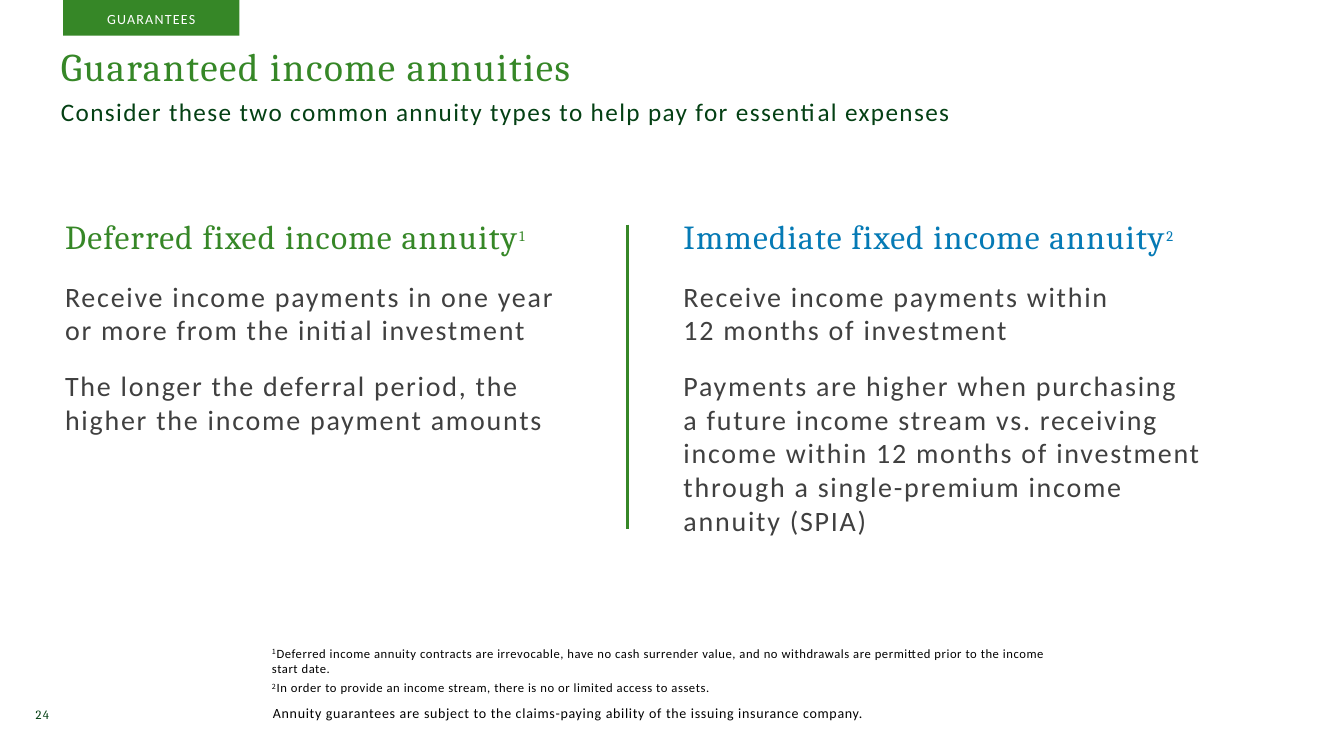
from dataclasses import dataclass

from lxml.etree import SubElement
from pptx import Presentation
from pptx.dml.color import RGBColor
from pptx.enum.shapes import MSO_CONNECTOR, MSO_SHAPE
from pptx.enum.text import MSO_ANCHOR, MSO_AUTO_SIZE, PP_ALIGN
from pptx.oxml.ns import qn
from pptx.slide import Slide
from pptx.text.text import TextFrame
from pptx.util import Emu, Pt

EMU_PER_PX = 9525


@dataclass(frozen=True)
class Style:
    font: str
    size: int
    color: str
    spacing: float
    baseline: int = 0


@dataclass(frozen=True)
class Theme:
    green: str = "368727"
    title: Style = Style("Cambria", 28, "368727", 1.15)
    subtitle: Style = Style("Calibri", 18, "044014", 1.0)
    tab: Style = Style("Calibri", 10, "FFFFFF", 0.9)
    deferred: Style = Style("Cambria", 24, "368727", 0.9)
    deferred_mark: Style = Style("Cambria", 18, "368727", 1.0, 32)
    immediate: Style = Style("Cambria", 24, "057AB5", 0.85)
    immediate_mark: Style = Style("Cambria", 18, "057AB5", 1.0, 32)
    body: Style = Style("Calibri", 20, "404040", 1.25)
    footnote: Style = Style("Calibri", 9, "000000", 0.4)
    footnote_mark: Style = Style("Noto Sans CJK TC", 9, "000000", 0.5, 28)
    guarantee: Style = Style("Calibri", 10, "000000", 0.5)
    page_number: Style = Style("Cambria", 9, "044014", 0.9)


THEME = Theme()


@dataclass(frozen=True)
class Piece:
    text: str
    style: Style


@dataclass(frozen=True)
class Line:
    pieces: tuple[Piece, ...]
    space_before: float = 0


@dataclass(frozen=True)
class Box:
    left: int
    top: int
    width: int
    height: int
    lines: tuple[Line, ...]
    inset_top: int = 1


def px(value: int) -> Emu:
    return Emu(value * EMU_PER_PX)


def line(text: str, style: Style, space_before: float = 0) -> Line:
    return Line((Piece(text, style),), space_before)


def annuity_lines(
    name: str, mark: str, style: Style, mark_style: Style, timing: str, benefit: str
) -> tuple[Line, ...]:
    return (
        Line((Piece(name, style), Piece(mark, mark_style))),
        line(timing, THEME.body, 16.2),
        line(benefit, THEME.body, 15.8),
    )


def footnote(mark: str, text: str, space_before: float = 0) -> Line:
    return Line((Piece(mark, THEME.footnote_mark), Piece(text, THEME.footnote)), space_before)


def format_run(run, style: Style) -> None:
    run.font.name = style.font
    run.font.size = Pt(style.size)
    run.font.color.rgb = RGBColor.from_string(style.color)
    properties = run._r.get_or_add_rPr()
    properties.set("spc", str(round(style.spacing * 100)))
    if style.baseline:
        properties.set("baseline", str(style.baseline * 1000))


def fill_text(
    frame: TextFrame, lines: tuple[Line, ...], inset_top: int, align: PP_ALIGN = PP_ALIGN.LEFT
) -> None:
    frame.word_wrap = True
    frame.auto_size = MSO_AUTO_SIZE.NONE
    frame.vertical_anchor = MSO_ANCHOR.TOP
    frame.margin_left = frame.margin_right = frame.margin_bottom = 0
    frame.margin_top = px(inset_top)
    for index, content in enumerate(lines):
        paragraph = frame.add_paragraph() if index else frame.paragraphs[0]
        first, *rest = content.pieces
        paragraph.text = first.text
        paragraph.alignment = align
        paragraph.space_before = Pt(content.space_before)
        for run in paragraph.runs:
            format_run(run, first.style)
        for piece in rest:
            run = paragraph.add_run()
            run.text = piece.text
            format_run(run, piece.style)


def place_title(slide: Slide, box: Box) -> None:
    title = slide.shapes.title
    title.left, title.top = px(box.left), px(box.top)
    title.width, title.height = px(box.width), px(box.height)
    fill_text(title.text_frame, box.lines, box.inset_top)


def add_text(slide: Slide, box: Box) -> None:
    shape = slide.shapes.add_textbox(px(box.left), px(box.top), px(box.width), px(box.height))
    fill_text(shape.text_frame, box.lines, box.inset_top)


def add_tab(slide: Slide, box: Box) -> None:
    tab = slide.shapes.add_shape(
        MSO_SHAPE.RECTANGLE, px(box.left), px(box.top), px(box.width), px(box.height)
    )
    tab.shadow.inherit = False
    tab.fill.solid()
    tab.fill.fore_color.rgb = RGBColor.from_string(THEME.green)
    tab.line.fill.background()
    fill_text(tab.text_frame, box.lines, box.inset_top, PP_ALIGN.CENTER)


def add_divider(slide: Slide, x: int, top: int, bottom: int) -> None:
    divider = slide.shapes.add_connector(
        MSO_CONNECTOR.STRAIGHT, px(x), px(top), px(x), px(bottom)
    )
    divider.line.color.rgb = RGBColor.from_string(THEME.green)
    divider.line.width = Pt(2.25)
    SubElement(divider._element.spPr, qn("a:effectLst"))


TITLE = Box(58, 28, 852, 93, (
    line("Guaranteed income annuities", THEME.title),
    line("Consider these two common annuity types to help pay for essential expenses",
         THEME.subtitle, 5),
), 12)
TAB = Box(60, 0, 168, 34, (line("GUARANTEES", THEME.tab),), 10)
TEXTS = (
    Box(62, 205, 480, 212, annuity_lines(
        "Deferred fixed income annuity", "1", THEME.deferred, THEME.deferred_mark,
        "Receive income payments in one year\vor more from the initial investment",
        "The longer the deferral period, the\vhigher the income payment amounts",
    )),
    Box(651, 205, 507, 308, annuity_lines(
        "Immediate fixed income annuity", "2", THEME.immediate, THEME.immediate_mark,
        "Receive income payments within\v12 months of investment",
        "Payments are higher when purchasing\va future income stream vs. receiving\v"
        "income within 12 months of investment\vthrough a single-premium income\v"
        "annuity (SPIA)",
    )),
    Box(259, 614, 749, 50, (
        footnote("1", "Deferred income annuity contracts are irrevocable, have no cash "
                 "surrender value, and no withdrawals are permitted prior to the income "
                 "start date."),
        footnote("2", "In order to provide an income stream, there is no or limited "
                 "access to assets.", 3.1),
    )),
    Box(260, 670, 568, 19, (
        line("Annuity guarantees are subject to the claims-paying ability of the "
             "issuing insurance company.", THEME.guarantee),
    )),
    Box(34, 672, 24, 18, (line("24", THEME.page_number),)),
)


def main() -> None:
    deck = Presentation()
    deck.slide_width, deck.slide_height = px(1280), px(720)
    slide = deck.slides.add_slide(deck.slide_layouts.get_by_name("Title Only"))
    place_title(slide, TITLE)
    add_tab(slide, TAB)
    for box in TEXTS:
        add_text(slide, box)
    add_divider(slide, 598, 214, 504)
    deck.save("out.pptx")


if __name__ == "__main__":
    main()
